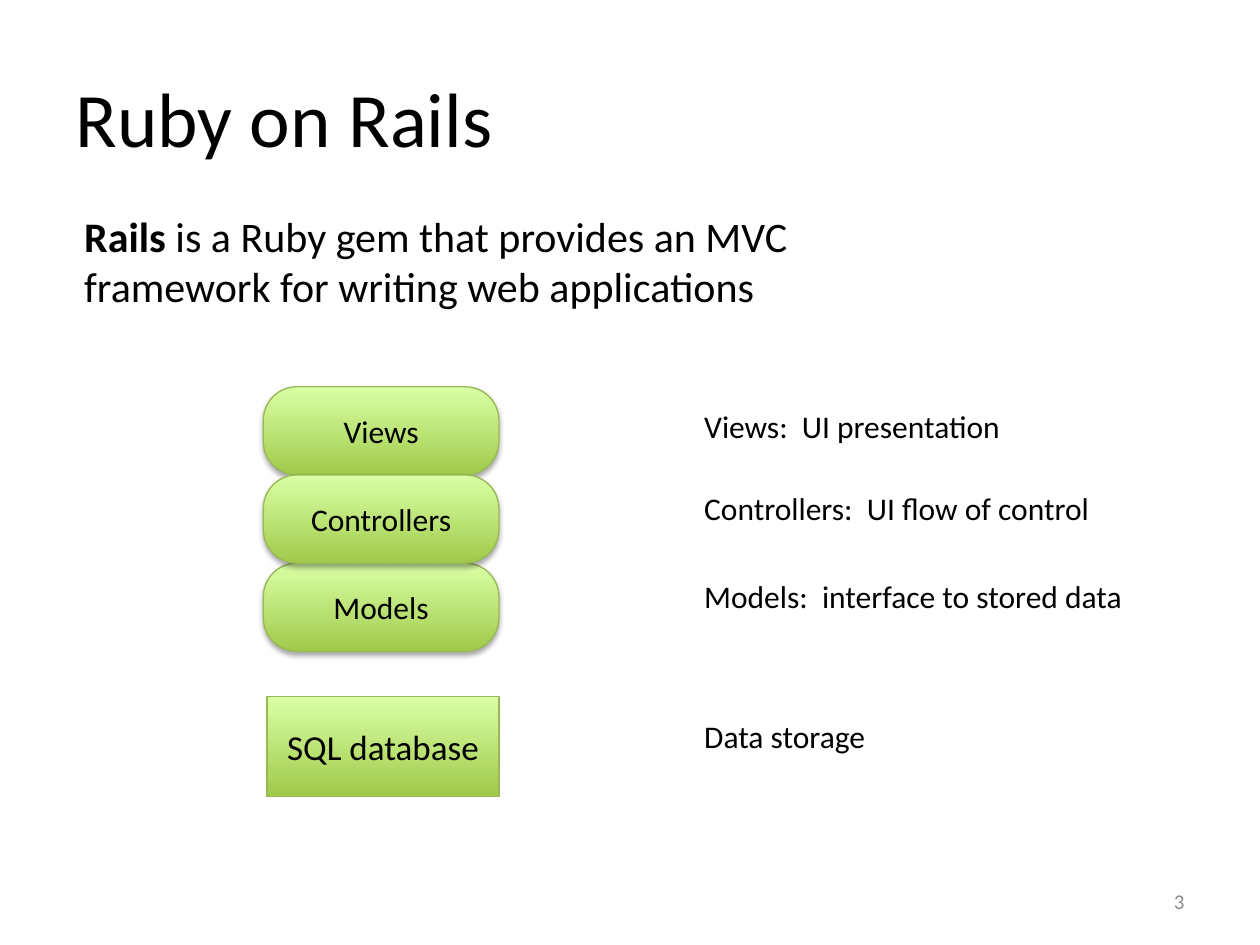
from lxml.etree import SubElement
from pptx import Presentation
from pptx.dml.color import RGBColor
from pptx.enum.shapes import MSO_SHAPE as Shape
from pptx.enum.text import MSO_ANCHOR as Anchor, PP_ALIGN as Align
from pptx.oxml.ns import qn
from pptx.util import Inches, Pt

deck = Presentation()
deck.slide_width, deck.slide_height = Inches(10), Inches(7.5)
page = deck.slides.add_slide(deck.slide_layouts[6])

LAYER_LEFT, LAYER_TOP, LAYER_WIDTH, LAYER_HEIGHT = 2.09, 3.07, 1.87, 0.7
NOTE_LEFT, NOTE_HEIGHT = 5.49, 0.4


def color(value):
    return RGBColor.from_string(value)


def write(box, spans, size, ink="000000", align=Align.LEFT, anchor=Anchor.TOP, wrap=True):
    frame = box.text_frame
    for name, value in {"word_wrap": wrap, "vertical_anchor": anchor}.items():
        setattr(frame, name, value)
    para = frame.paragraphs[0]
    para.alignment = align
    for text, bold in spans:
        span = para.add_run()
        span.text = text
        for name, value in {"name": "Calibri", "size": Pt(size), "bold": bold}.items():
            setattr(span.font, name, value)
        span.font.color.rgb = color(ink)


intro = [
    ("Rails", True),
    (" is a Ruby gem that provides an MVC framework for writing web applications", False),
]
texts = [
    ((0.5, 0.3, 9, 1.25), [("Ruby on Rails", False)], {"size": 44, "anchor": Anchor.MIDDLE}),
    ((0.57, 1.62, 6.1, 0.91), intro, {"size": 24}),
    ((7.17, 6.95, 2.33, 0.4), [("3", False)],
     {"size": 12, "ink": "8C8C8C", "align": Align.RIGHT, "anchor": Anchor.MIDDLE}),
]
notes = [
    (3.18, 2.59, "Views:  UI presentation"),
    (3.83, 3.31, "Controllers:  UI flow of control"),
    (4.53, 3.58, "Models:  interface to stored data"),
    (5.64, 1.51, "Data storage"),
]
for top, width, text in notes:
    area = (NOTE_LEFT, top, width, NOTE_HEIGHT)
    texts.append((area, [(text, False)], {"size": 18, "wrap": False}))

for area, spans, style in texts:
    write(page.shapes.add_textbox(*map(Inches, area)), spans, **style)

blocks = [("SQL database", Shape.RECTANGLE, (2.12, 5.53, 1.84, 0.79), 20)]
for row, name in [(0, "Views"), (2, "Models"), (1, "Controllers")]:
    area = (LAYER_LEFT, LAYER_TOP + row * LAYER_HEIGHT, LAYER_WIDTH, LAYER_HEIGHT)
    blocks.append((name, Shape.ROUNDED_RECTANGLE, area, 18))

for name, outline, area, size in blocks:
    block = page.shapes.add_shape(outline, *map(Inches, area))
    block.shadow.inherit = False
    block.fill.gradient()
    block.fill.gradient_angle = 90
    for stop, tone in zip(block.fill.gradient_stops, ("A0CA4A", "DAFFA5")):
        stop.color.rgb = color(tone)
    block.line.color.rgb = color("98B955")
    block.line.width = Pt(0.75)
    if outline == Shape.ROUNDED_RECTANGLE:
        block.adjustments[0] = 0.38
        effects = block.element.spPr.find(qn("a:effectLst"))
        shadow = SubElement(effects, qn("a:outerShdw"), blurRad=str(Pt(3.1)),
                            dist=str(Pt(1.8)), dir="5400000", rotWithShape="0")
        shade = SubElement(shadow, qn("a:srgbClr"), val="000000")
        SubElement(shade, qn("a:alpha"), val="35000")
    write(block, [(name, False)], size, align=Align.CENTER, anchor=Anchor.MIDDLE)

deck.save("out.pptx")
